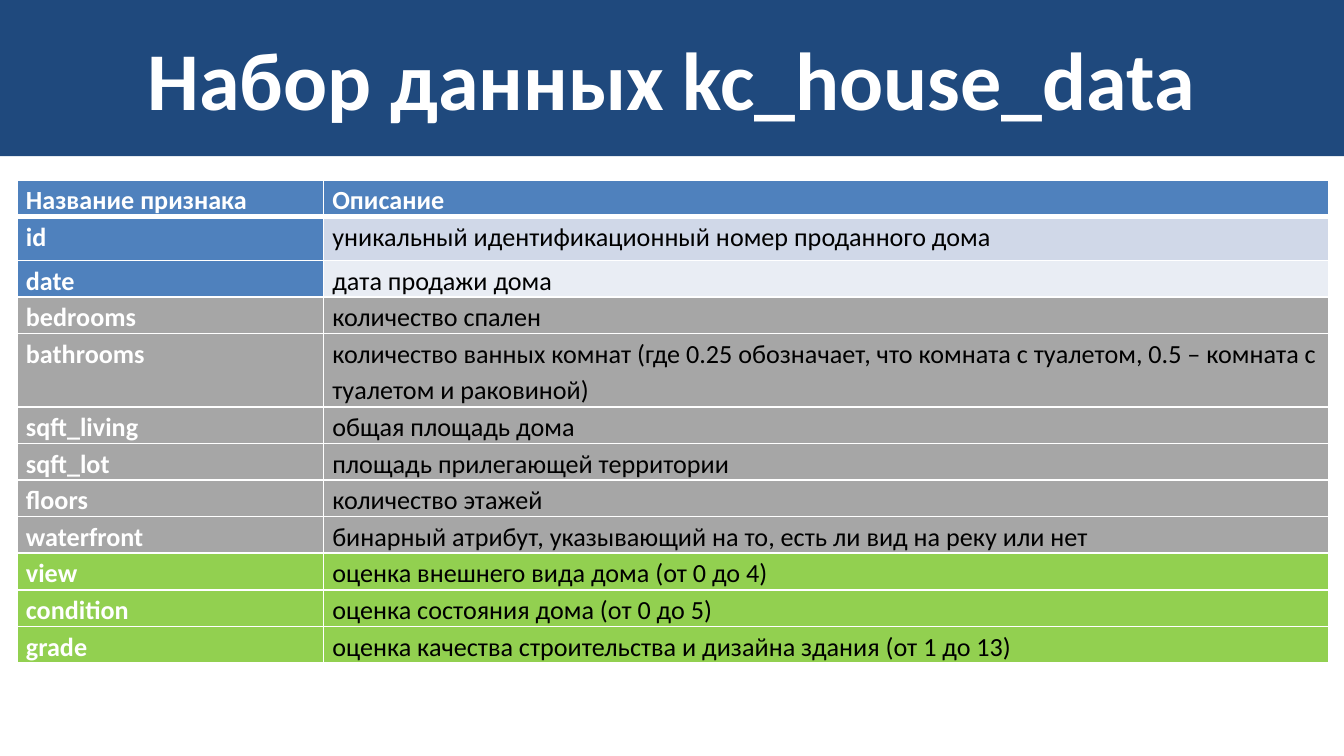
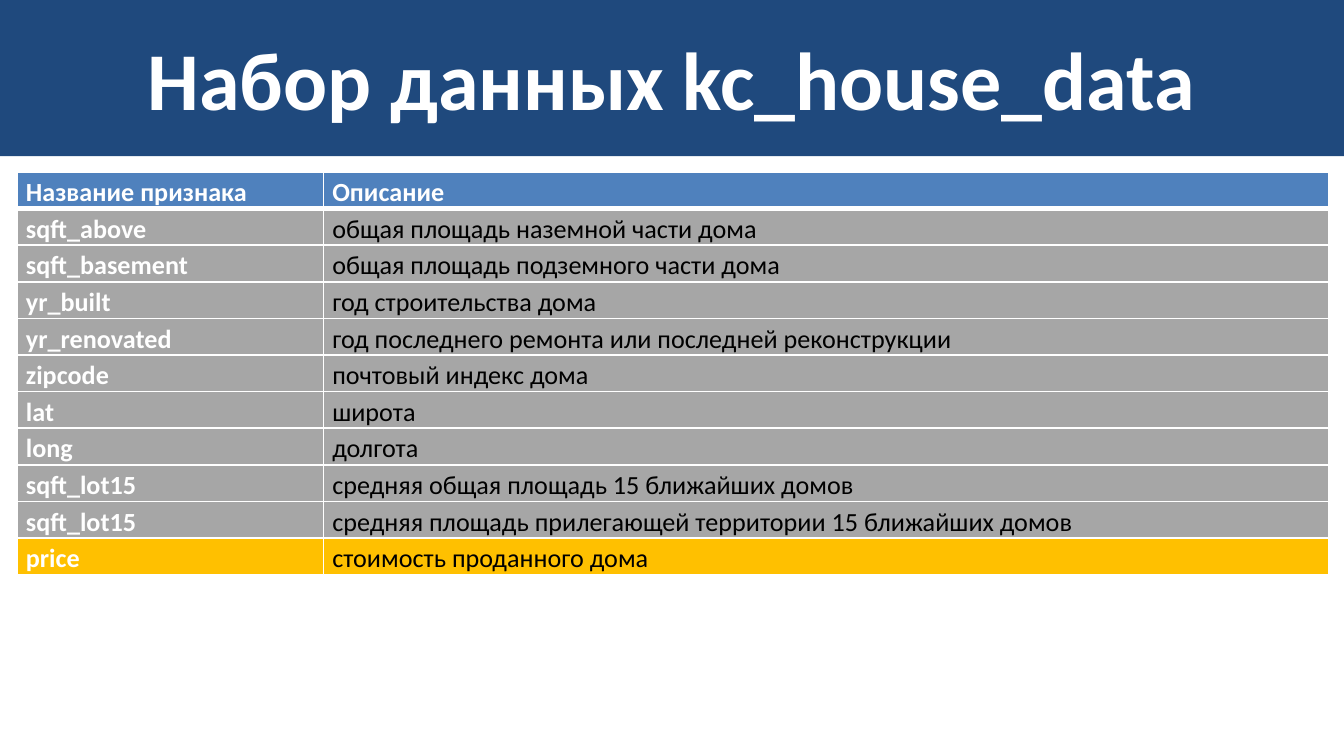
import pptx
import pptx.dml.color
import pptx.enum.text
import pptx.oxml.ns
import pptx.util
from lxml import etree

Cm = pptx.util.Cm
Pt = pptx.util.Pt

WHITE, BLACK = "FFFFFF", "000000"
NAVY, BLUE = "1F497D", "4F81BD"
PALE, PALER = "D0D8E8", "E9EDF4"
GREY, GREEN, AMBER = "A6A6A6", "92D050", "FFC000"

HEADING = "Набор данных kc_house_data"
COLUMNS = ("Название признака", "Описание", BLUE, BLUE)

HOUSE_FEATURES = [
    ("id", "уникальный идентификационный номер проданного дома", BLUE, PALE),
    ("date", "дата продажи дома", BLUE, PALER),
    ("bedrooms", "количество спален", GREY, GREY),
    ("bathrooms", "количество ванных комнат (где 0.25 обозначает, что комната с туалетом, "
                  "0.5 – комната с туалетом и раковиной)", GREY, GREY),
    ("sqft_living", "общая площадь дома", GREY, GREY),
    ("sqft_lot", "площадь прилегающей территории", GREY, GREY),
    ("floors", "количество этажей", GREY, GREY),
    ("waterfront", "бинарный атрибут, указывающий на то, есть ли вид на реку или нет", GREY, GREY),
    ("view", "оценка внешнего вида дома (от 0 до 4)", GREEN, GREEN),
    ("condition", "оценка состояния дома (от 0 до 5)", GREEN, GREEN),
    ("grade", "оценка качества строительства и дизайна здания (от 1 до 13)", GREEN, GREEN),
]

AREA_AND_PRICE_FEATURES = [
    ("sqft_above", "общая площадь наземной части дома", GREY, GREY),
    ("sqft_basement", "общая площадь подземного части дома", GREY, GREY),
    ("yr_built", "год строительства дома", GREY, GREY),
    ("yr_renovated", "год последнего ремонта или последней реконструкции", GREY, GREY),
    ("zipcode", "почтовый индекс дома", GREY, GREY),
    ("lat", "широта", GREY, GREY),
    ("long", "долгота", GREY, GREY),
    ("sqft_lot15", "средняя общая площадь 15 ближайших домов", GREY, GREY),
    ("sqft_lot15", "средняя площадь прилегающей территории 15 ближайших домов", GREY, GREY),
    ("price", "стоимость проданного дома", AMBER, AMBER),
]


def rgb(value):
    """Turn a hex string into a colour."""
    return pptx.dml.color.RGBColor.from_string(value)


def paint(target, value):
    """Fill a shape or a cell with one colour."""
    target.fill.solid()
    target.fill.fore_color.rgb = rgb(value)


def write(frame, text, size=14, color=BLACK, bold=False, align=None, spacing=None, after=None):
    """Put one formatted paragraph into a text frame."""
    paragraph = frame.paragraphs[0]
    paragraph.alignment = align
    paragraph.line_spacing = spacing
    paragraph.space_after = after
    run = paragraph.add_run()
    run.text = text
    run.font.name = "Calibri"
    run.font.size = Pt(size)
    run.font.bold = bold
    run.font.color.rgb = rgb(color)


def outline(cell, **widths):
    """Draw white cell borders, with widths in points by side."""
    properties = cell._tc.get_or_add_tcPr()
    for side in "LRTB":
        border = etree.SubElement(properties, pptx.oxml.ns.qn(f"a:ln{side}"),
                                  w=str(Pt(widths.get(side, 1))))
        solid = etree.SubElement(border, pptx.oxml.ns.qn("a:solidFill"))
        etree.SubElement(solid, pptx.oxml.ns.qn("a:srgbClr"), val=WHITE)


class Deck:
    """Hold the presentation, its style and the current slide."""

    column_widths = (Cm(5.79), Cm(19))
    table_left = Cm(0.32)
    row_height = Cm(0.66)
    inset = Cm(0.17)

    def __init__(self):
        """Start an empty wide presentation."""
        self.show = pptx.Presentation()
        self.show.slide_width = Cm(25.4)
        self.show.slide_height = Cm(14.29)
        self.slide = None

    def titled_slide(self, heading):
        """Add a slide with its title in the top band."""
        self.slide = self.show.slides.add_slide(self.show.slide_layouts[5])
        band = self.slide.shapes.title
        band.left, band.top = Cm(0), Cm(0)
        band.width, band.height = self.show.slide_width, Cm(2.95)
        paint(band, NAVY)
        band.text_frame.auto_size = pptx.enum.text.MSO_AUTO_SIZE.NONE
        band.text_frame.vertical_anchor = pptx.enum.text.MSO_ANCHOR.MIDDLE
        write(band.text_frame, heading, size=44, color=WHITE, bold=True,
              align=pptx.enum.text.PP_ALIGN.CENTER)

    def feature_table(self, features, top, heights=None):
        """Add a table of features, with taller rows given by feature name."""
        rows = [COLUMNS, *features]
        table = self.slide.shapes.add_table(
            len(rows), 2, self.table_left, top,
            sum(self.column_widths), self.row_height * len(rows)).table
        table.horz_banding = False
        table.first_col = True
        for column, width in zip(table.columns, self.column_widths):
            column.width = width
        for index, (name, description, *fills) in enumerate(rows):
            table.rows[index].height = (heights or {}).get(name, self.row_height)
            for position, text in enumerate((name, description)):
                self.feature_cell(table.cell(index, position), text, fills[position],
                                  strong=index == 0 or position == 0, row=index)

    def feature_cell(self, cell, text, fill, strong, row):
        """Format one cell of a feature table."""
        cell.margin_left = cell.margin_right = self.inset
        cell.margin_top = cell.margin_bottom = Cm(0)
        outline(cell, B=3 if row == 0 else 1, T=3 if row == 1 else 1)
        paint(cell, fill)
        write(cell.text_frame, text, color=WHITE if strong else BLACK, bold=strong,
              spacing=1.15, after=Pt(6))


def main():
    """Build both slides and save them."""
    deck = Deck()
    deck.titled_slide(HEADING)
    deck.feature_table(HOUSE_FEATURES, Cm(3.4), {"id": Cm(0.83), "bathrooms": Cm(1.32)})
    deck.titled_slide(HEADING)
    deck.feature_table(AREA_AND_PRICE_FEATURES, Cm(3.25))
    deck.show.save("out.pptx")


if __name__ == "__main__":
    main()
